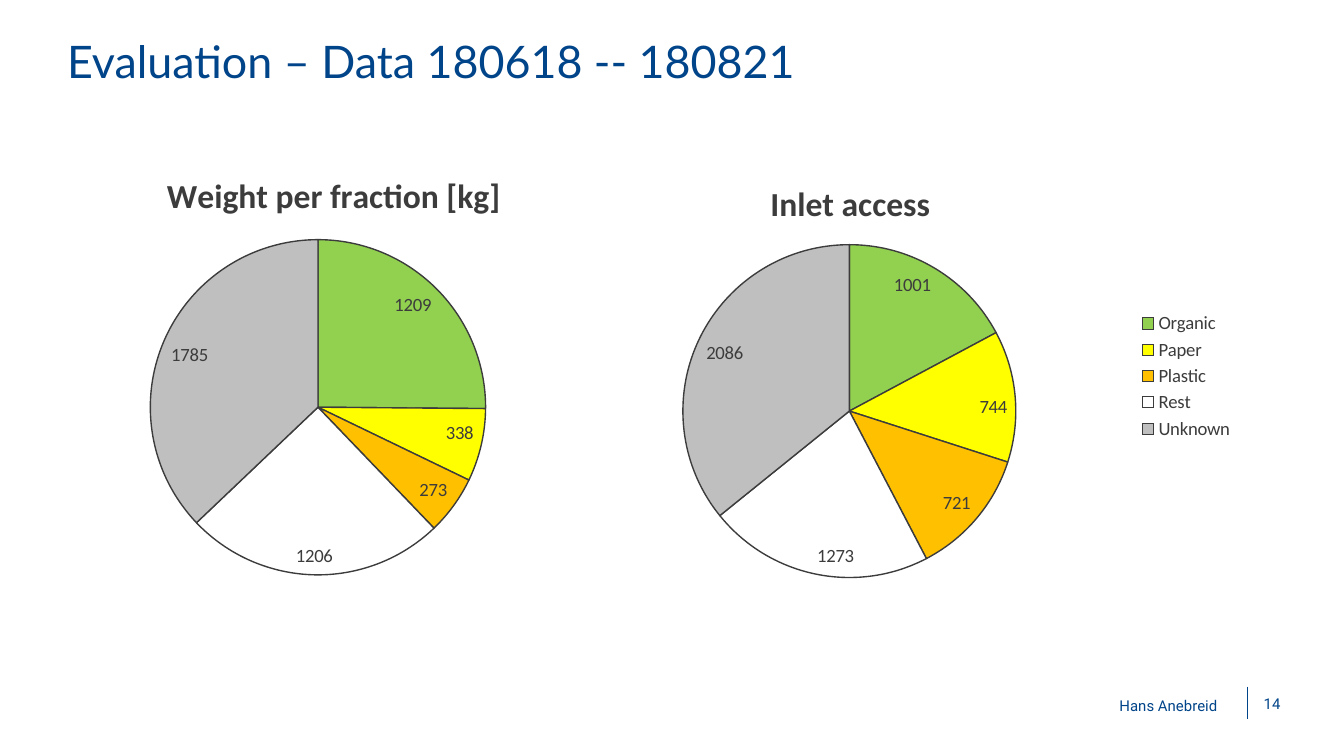
from dataclasses import dataclass
from typing import Any, Optional

import lxml.etree
import pptx
import pptx.chart.data
import pptx.dml.color
import pptx.enum.chart
import pptx.enum.shapes
import pptx.enum.text
import pptx.oxml
import pptx.oxml.ns
import pptx.util

Cm = pptx.util.Cm
Pt = pptx.util.Pt
RGBColor = pptx.dml.color.RGBColor
Align = pptx.enum.text.PP_ALIGN
Anchor = pptx.enum.text.MSO_ANCHOR
qn = pptx.oxml.ns.qn

NAVY = RGBColor(0x00, 0x44, 0x89)
CHARCOAL = RGBColor(0x3C, 0x3C, 0x3C)
GREEN = RGBColor(0x92, 0xD0, 0x50)
YELLOW = RGBColor(0xFF, 0xFF, 0x00)
ORANGE = RGBColor(0xFF, 0xC0, 0x00)
WHITE = RGBColor(0xFF, 0xFF, 0xFF)
GREY = RGBColor(0xBF, 0xBF, 0xBF)
FRACTION_COLORS = (GREEN, YELLOW, ORANGE, WHITE, GREY)


@dataclass
class Label:
    text: str
    box: tuple[float, float, float, float]
    font: dict[str, Any]
    frame: dict[str, Any]
    paragraph: dict[str, Any]


@dataclass
class Pie:
    title: str
    box: tuple[float, float, float, float]
    categories: tuple[str, ...]
    values: tuple[int, ...]
    plot: dict[str, float]
    title_place: Optional[dict[str, float]] = None
    legend: bool = False


FOOTER_FONT = {"name": "Roboto", "size": Pt(8)}
LABELS = (
    Label("Evaluation – Data 180618 -- 180821", (1.27, 0.51, 22.96, 1.47),
          {"name": "Lato", "size": Pt(24)},
          {"margin_top": Cm(0.13), "margin_bottom": Cm(0.13)}, {}),
    Label("14", (23.01, 12.9, 1.19, 0.81), FOOTER_FONT,
          {"vertical_anchor": Anchor.MIDDLE}, {"alignment": Align.RIGHT}),
    Label("Hans Anebreid", (8.56, 12.9, 14.45, 0.81), FOOTER_FONT,
          {"margin_top": Cm(0.1)}, {"alignment": Align.RIGHT, "line_spacing": 1.5}),
)
PIES = (
    Pie("Weight per fraction [kg]", (0.33, 2.84, 11.96, 8.38),
        ("1", "2", "3", "4", "5"), (1209, 338, 273, 1206, 1785),
        {"x": 0.21, "y": 0.2, "w": 0.53, "h": 0.76}),
    Pie("Inlet access", (10.72, 2.97, 12.85, 8.28),
        ("Organic", "Paper", "Plastic", "Rest", "Unknown"), (1001, 744, 721, 1273, 2086),
        {"x": 0.17, "y": 0.2, "w": 0.49, "h": 0.76}, {"x": 0.29, "y": 0.04}, True),
)


def apply_format(target: Any, values: dict[str, Any]) -> None:
    for name, value in values.items():
        setattr(target, name, value)


def add_label(slide: Any, label: Label) -> None:
    frame = slide.shapes.add_textbox(*map(Cm, label.box)).text_frame
    margins = {f"margin_{side}": 0 for side in ("left", "top", "right", "bottom")}
    apply_format(frame, {"word_wrap": True, **margins, **label.frame})
    paragraph = frame.paragraphs[0]
    apply_format(paragraph, label.paragraph)
    run = paragraph.add_run()
    run.text = label.text
    apply_format(run.font, label.font)
    run.font.color.rgb = NAVY


def set_layout(parent: Any, place: dict[str, float]) -> None:
    """Place a chart part by fractions of the chart's size."""
    layout = parent.find(qn("c:layout"))
    if layout is None:
        layout = pptx.oxml.parse_xml(f'<c:layout {pptx.oxml.ns.nsdecls("c")}/>')
        parent.insert(0, layout)
    manual = lxml.etree.SubElement(layout, qn("c:manualLayout"))
    settings: dict[str, Any] = {"layoutTarget": "inner"} if "w" in place else {}
    settings.update({"xMode": "edge", "yMode": "edge"}, **place)
    for tag, value in settings.items():
        lxml.etree.SubElement(manual, qn(f"c:{tag}")).set("val", str(value))


def add_pie(slide: Any, pie: Pie) -> None:
    data = pptx.chart.data.CategoryChartData()
    data.categories = pie.categories
    data.add_series("Series 1", pie.values)
    chart = slide.shapes.add_chart(
        pptx.enum.chart.XL_CHART_TYPE.PIE, *map(Cm, pie.box), data).chart
    apply_format(chart.font, {"name": "Calibri", "size": Pt(10)})
    chart.font.color.rgb = CHARCOAL

    # Title
    chart.has_title = True
    title_frame = chart.chart_title.text_frame
    title_frame.text = pie.title
    title_font = title_frame.paragraphs[0].runs[0].font
    apply_format(title_font, {"name": "Calibri", "size": Pt(18), "bold": True})
    title_font.color.rgb = CHARCOAL
    if pie.title_place:
        set_layout(chart.element.find(".//" + qn("c:title")), pie.title_place)

    # Legend
    chart.has_legend = pie.legend
    if pie.legend:
        apply_format(chart.legend, {
            "position": pptx.enum.chart.XL_LEGEND_POSITION.RIGHT,
            "include_in_layout": False})

    # Slices and values
    plot = chart.plots[0]
    apply_format(plot, {"vary_by_categories": True, "has_data_labels": True})
    apply_format(plot.data_labels, {
        "show_value": True, "show_percentage": False,
        "number_format": "0", "number_format_is_linked": False,
        "position": pptx.enum.chart.XL_LABEL_POSITION.INSIDE_END})
    for index, color in enumerate(FRACTION_COLORS):
        slice_format = plot.series[0].points[index].format
        slice_format.fill.solid()
        slice_format.fill.fore_color.rgb = color
        slice_format.line.color.rgb = CHARCOAL
        slice_format.line.width = Pt(0.75)
    set_layout(chart.element.find(".//" + qn("c:plotArea")), pie.plot)


def add_footer_rule(slide: Any) -> None:
    rule = slide.shapes.add_connector(
        pptx.enum.shapes.MSO_CONNECTOR.STRAIGHT,
        Cm(23.57), Cm(12.98), Cm(23.57), Cm(13.59))
    rule.line.color.rgb = NAVY
    rule.line.width = Pt(0.5)
    lxml.etree.SubElement(rule.element.spPr, qn("a:effectLst"))


def main() -> None:
    presentation = pptx.Presentation()
    apply_format(presentation, {"slide_width": Cm(25.4), "slide_height": Cm(14.29)})
    slide = presentation.slides.add_slide(presentation.slide_layouts[6])

    add_footer_rule(slide)
    for label in LABELS:
        add_label(slide, label)
    for pie in PIES:
        add_pie(slide, pie)

    presentation.save("out.pptx")


if __name__ == "__main__":
    main()
